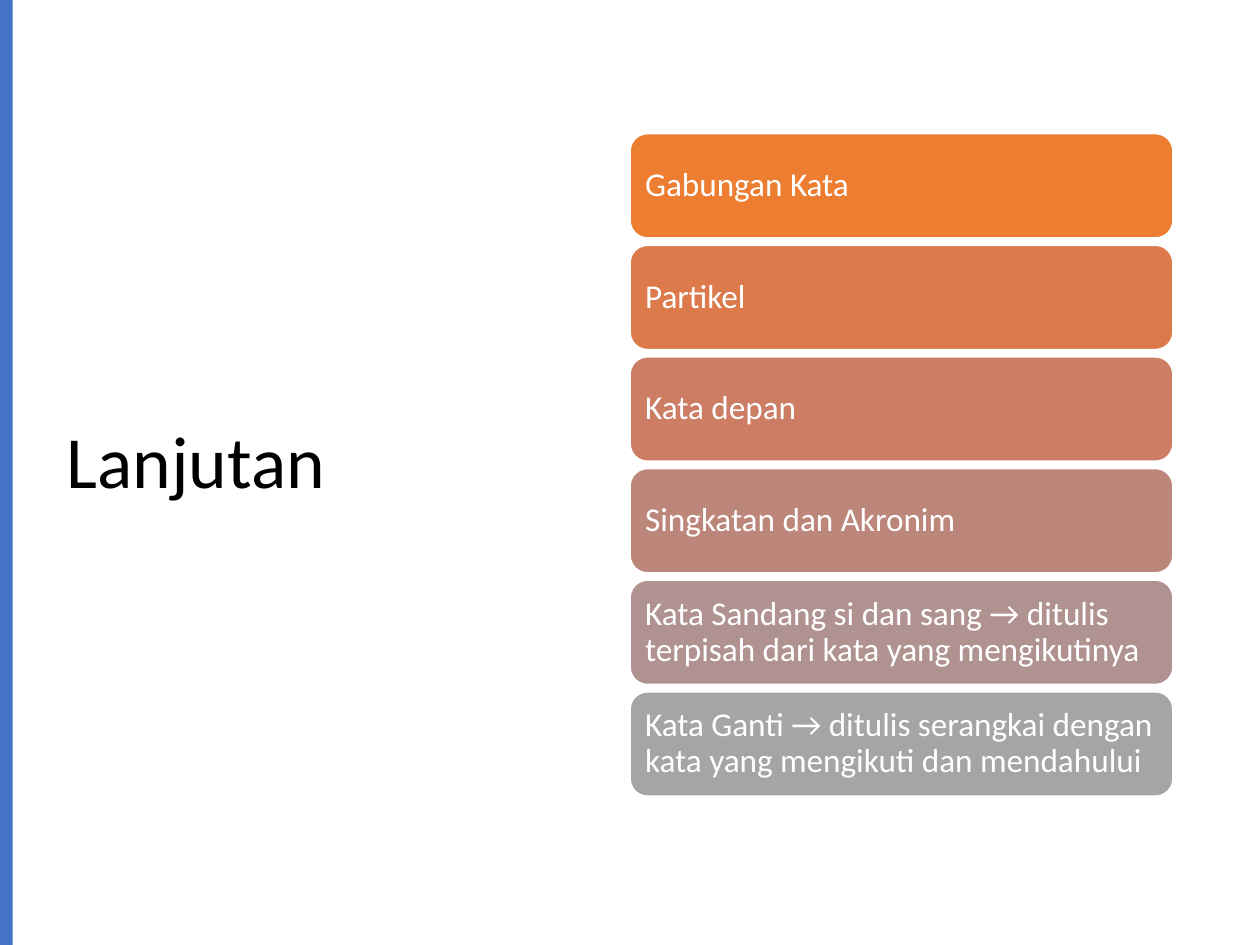
import pptx
import pptx.util
import pptx.dml.color
import pptx.enum.shapes
import pptx.enum.text

Inches = pptx.util.Inches
Pt = pptx.util.Pt
SHAPE = pptx.enum.shapes.MSO_SHAPE

COLORS = {"text": "000000", "white": "FFFFFF", "stripe": "4472C4"}

TOPICS = [
    ("Gabungan Kata", "ED7D31"),
    ("Partikel", "DC7A4B"),
    ("Kata depan", "CC7D64"),
    ("Singkatan dan Akronim", "BD867B"),
    ("Kata Sandang si dan sang → ditulis terpisah dari kata yang mengikutinya", "B09391"),
    ("Kata Ganti → ditulis serangkai dengan kata yang mengikuti dan mendahului", "A5A5A5"),
]


def rgb(value):
    return pptx.dml.color.RGBColor.from_string(value)


def write(sp, text, size, color, inset):
    tf = sp.text_frame
    tf.word_wrap = True
    tf.vertical_anchor = pptx.enum.text.MSO_ANCHOR.MIDDLE
    tf.margin_left = tf.margin_right = Inches(inset)
    tf.margin_top = tf.margin_bottom = Inches(min(inset, 0.08))
    p = tf.paragraphs[0]
    p.alignment = pptx.enum.text.PP_ALIGN.LEFT
    p.line_spacing = 0.9
    r = p.add_run()
    r.text = text
    r.font.name = "Calibri"
    r.font.size = Pt(size)
    r.font.color.rgb = rgb(color)


prs = pptx.Presentation()
prs.slide_width = Inches(10)
prs.slide_height = Inches(7.5)
s = prs.slides.add_slide(prs.slide_layouts[6])

# Title
sp = s.shapes.add_textbox(Inches(0.43), Inches(0.68), Inches(4.25), Inches(6.02))
write(sp, "Lanjutan", 42, COLORS["text"], 0.1)

# Stripe along the left edge
sp = s.shapes.add_shape(SHAPE.RECTANGLE, 0, 0, Inches(0.1), prs.slide_height)
sp.shadow.inherit = False
sp.fill.solid()
sp.fill.fore_color.rgb = rgb(COLORS["stripe"])
sp.line.fill.background()

# Topic cards, evenly spaced from first to last
first_top, last_top = 1.06, 5.49
pitch = (last_top - first_top) / (len(TOPICS) - 1)
for i, (topic, fill) in enumerate(TOPICS):
    sp = s.shapes.add_shape(SHAPE.ROUNDED_RECTANGLE, Inches(5), Inches(first_top + i * pitch),
                            Inches(4.31), Inches(0.83))
    sp.shadow.inherit = False
    sp.fill.solid()
    sp.fill.fore_color.rgb = rgb(fill)
    sp.line.color.rgb = rgb(COLORS["white"])
    sp.line.width = Pt(1)
    write(sp, topic, 19, COLORS["white"], 0.08)

prs.save("out.pptx")
